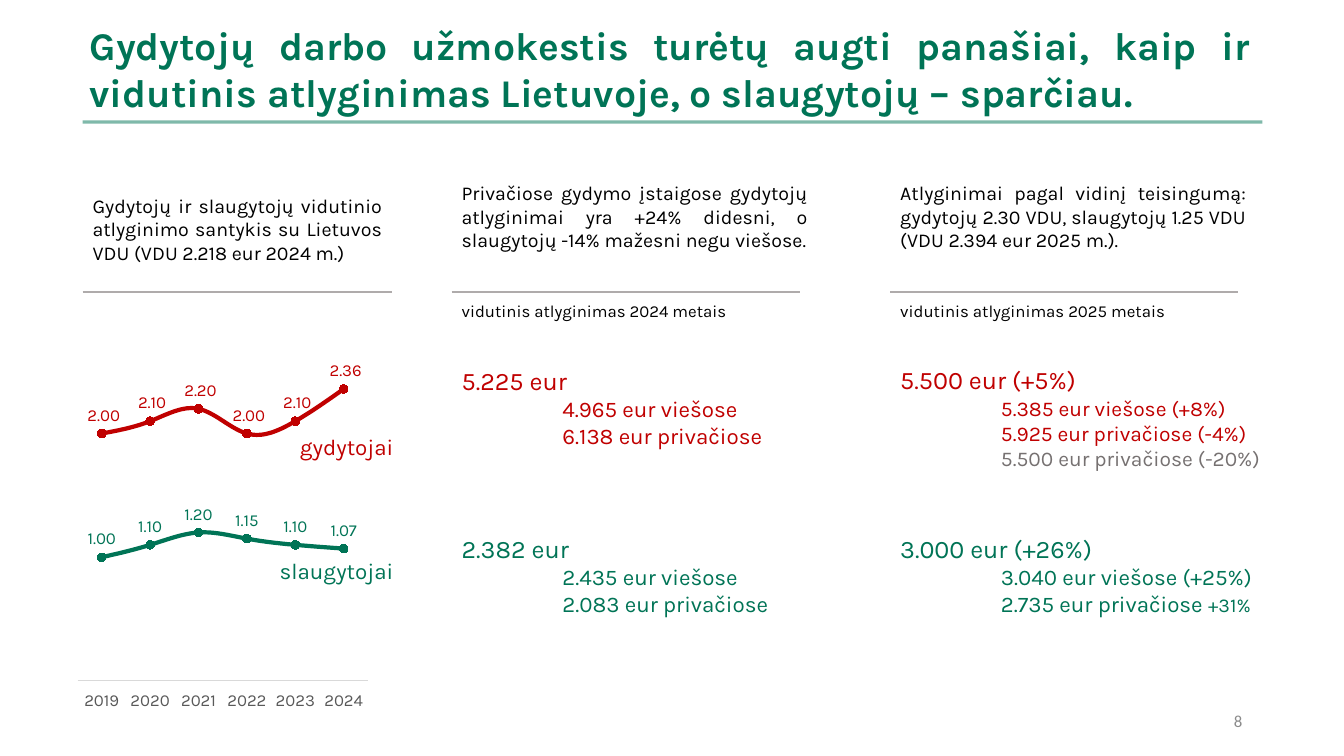
from lxml import etree
from pptx import Presentation
from pptx.chart.data import CategoryChartData
from pptx.dml.color import RGBColor
from pptx.enum.chart import (XL_CHART_TYPE, XL_LABEL_POSITION, XL_MARKER_STYLE,
                             XL_TICK_LABEL_POSITION, XL_TICK_MARK)
from pptx.enum.shapes import MSO_CONNECTOR
from pptx.enum.text import MSO_ANCHOR, MSO_AUTO_SIZE, PP_ALIGN
from pptx.oxml.ns import qn
from pptx.util import Inches, Pt

LEFT, RIGHT, JUSTIFY = PP_ALIGN.LEFT, PP_ALIGN.RIGHT, PP_ALIGN.JUSTIFY
FONT = "Karla"
COLORS = {"doctors": "C00000", "nurses": "007456", "text": "000000", "old": "767171",
          "rule": "AFABAB", "axis": "D9D9D9", "years": "595959", "page": "8B8B8B"}

# Content
TITLE = ("Gydytojų darbo užmokestis turėtų augti panašiai, kaip ir "
         "vidutinis atlyginimas Lietuvoje, o slaugytojų – sparčiau.")
PAGE = "8"
YEARS = ["2019", "2020", "2021", "2022", "2023", "2024"]
SPACED = r"_-* #\ ##0.00_-;\-* #\ ##0.00_-;_-* \-??"
# group, name, ratios, label format, name left, top
RATIOS = [
    ("doctors", "gydytojai", (2, 2.1, 2.2, 2, 2.1, 2.36), SPACED, 2.58, 4.25),
    ("nurses", "slaugytojai", (1, 1.1, 1.2, 1.15, 1.1, 1.07), "#,##0.00", 2.31, 5.48),
]
# Each pay line is a list of (text, size, colour) pieces
COLUMNS = [
    {"intro": "Gydytojų ir slaugytojų vidutinio atlyginimo santykis su Lietuvos "
              "VDU (VDU 2.218 eur 2024 m.)"},
    {"intro": "Privačiose gydymo įstaigose gydytojų atlyginimai yra +24% didesni, "
              "o slaugytojų -14% mažesni negu viešose.",
     "caption": "vidutinis atlyginimas 2024 metais",
     "pay": [
         [[("5.225 eur", 18, "doctors")],
          [("\t4.965 eur viešose", 16, "doctors")],
          [("\t6.138 eur privačiose", 16, "doctors")]],
         [[("2.382 eur", 18, "nurses")],
          [("\t2.435 eur viešose", 16, "nurses")],
          [("\t2.083 eur privačiose", 16, "nurses")]]]},
    {"intro": "Atlyginimai pagal vidinį teisingumą: gydytojų 2.30 VDU, slaugytojų "
              "1.25 VDU (VDU 2.394 eur 2025 m.).",
     "caption": "vidutinis atlyginimas 2025 metais",
     "pay": [
         [[("5.500 eur (+5%)", 18, "doctors")],
          [("\t5.385 eur viešose (+8%)", 15, "doctors")],
          [("\t5.925 eur privačiose (-4%)", 15, "doctors")],
          [("\t5.500 eur privačiose (-20%)", 15, "old")]],
         [[("3.000 eur (+26%)", 18, "nurses")],
          [("\t3.040 eur viešose (+25%)", 16, "nurses")],
          [("\t2.735 eur privačiose ", 16, "nurses"), ("+31%", 14, "nurses")]]]},
]

# Grid, in inches: column left, rule width, intro width, intro top, pay width
GRID = [(0.82, 3.07, 3.07, 1.87, 0), (4.48, 3.45, 3.63, 1.75, 3.93),
        (8.83, 3.45, 3.63, 1.75, 4.33)]
RULE_Y, CAPTION_Y, PAY_ROWS = 2.9, 2.93, (3.57, 5.24)
TITLE_RULE = (0.82, 1.21, 11.7)
PLOT_SHARES = {"x": 0.02, "y": 0.03, "w": 0.96, "h": 0.88}

prs = Presentation()
prs.slide_width, prs.slide_height = Inches(13.33), Inches(7.5)
slide = prs.slides.add_slide(prs.slide_layouts[6])


def rgb(name):
    return RGBColor.from_string(COLORS[name])


def style(font, size, color, face=FONT, bold=False):
    font.size, font.name, font.bold = Pt(size), face, bold
    font.color.rgb = rgb(color)


def add_text(x, y, w, h, lines, align=LEFT, face=FONT, bold=False, anchor=MSO_ANCHOR.TOP):
    frame = slide.shapes.add_textbox(*map(Inches, (x, y, w, h))).text_frame
    frame.word_wrap = True
    frame.auto_size = MSO_AUTO_SIZE.SHAPE_TO_FIT_TEXT
    frame.vertical_anchor = anchor
    for i, pieces in enumerate(lines):
        paragraph = frame.add_paragraph() if i else frame.paragraphs[0]
        paragraph.alignment = align
        if pieces[0][0].startswith("\t"):
            stops = etree.SubElement(paragraph._p.get_or_add_pPr(), qn("a:tabLst"))
            etree.SubElement(stops, qn("a:tab"), pos=str(Inches(1)), algn="l")
        for text, size, color in pieces:
            run = paragraph.add_run()
            run.text = text
            style(run.font, size, color, face, bold)


def add_rule(x, y, w, color, width, opacity=100):
    rule = slide.shapes.add_connector(MSO_CONNECTOR.STRAIGHT, *map(Inches, (x, y, x + w, y)))
    rule.line.color.rgb, rule.line.width = rgb(color), Pt(width)
    if opacity < 100:
        fill = rule.line._ln.find(".//" + qn("a:srgbClr"))
        etree.SubElement(fill, qn("a:alpha"), val=str(opacity * 1000))
    etree.SubElement(rule._element.spPr, qn("a:effectLst"))


# Page number and title
add_text(9.42, 6.95, 3, 0.4, [[(PAGE, 12, "page")]], RIGHT, "Calibri", anchor=MSO_ANCHOR.MIDDLE)
add_text(0.79, 0.16, 11.7, 1.5, [[(TITLE, 28, "nurses")]], JUSTIFY, bold=True)
add_rule(*TITLE_RULE, "nurses", 2.25, opacity=50)

# Pay ratio chart
ratio_data = CategoryChartData()
ratio_data.categories = YEARS
for _, name, values, *_ in RATIOS:
    ratio_data.add_series(name, values)
chart = slide.shapes.add_chart(XL_CHART_TYPE.LINE_MARKERS,
                               *map(Inches, (0.71, 3.58, 3, 3.49)), ratio_data).chart
chart.has_legend = chart.has_title = False
style(chart.font, 12, "text")
plot = chart.plots[0]
plot.vary_by_categories = False

value_axis, year_axis = chart.value_axis, chart.category_axis
value_axis.minimum_scale, value_axis.maximum_scale = 0, 2.5
value_axis.has_major_gridlines = False
value_axis.visible = False
year_axis.major_tick_mark = year_axis.minor_tick_mark = XL_TICK_MARK.NONE
year_axis.tick_label_position = XL_TICK_LABEL_POSITION.LOW
year_axis.format.line.color.rgb = rgb("axis")
year_axis.format.line.width = Pt(0.75)
style(year_axis.tick_labels.font, 12, "years")

plot_area = chart._chartSpace.chart.plotArea
for old_layout in plot_area.findall(qn("c:layout")):
    plot_area.remove(old_layout)
layout = etree.Element(qn("c:layout"))
plot_area.insert(0, layout)
manual = etree.SubElement(layout, qn("c:manualLayout"))
etree.SubElement(manual, qn("c:layoutTarget"), val="inner")
for side in "xy":
    etree.SubElement(manual, qn(f"c:{side}Mode"), val="edge")
for side, share in PLOT_SHARES.items():
    etree.SubElement(manual, qn(f"c:{side}"), val=str(share))

for series, (group, name, _, number_format, x, y) in zip(plot.series, RATIOS):
    series.smooth = True
    series.format.line.color.rgb, series.format.line.width = rgb(group), Pt(3)
    marker = series.marker
    marker.style, marker.size = XL_MARKER_STYLE.CIRCLE, 6
    marker.format.fill.solid()
    marker.format.fill.fore_color.rgb = marker.format.line.color.rgb = rgb(group)
    labels = series.data_labels
    labels.show_value, labels.position = True, XL_LABEL_POSITION.ABOVE
    labels.number_format, labels.number_format_is_linked = number_format, False
    style(labels.font, 12, group)
    add_text(x, y, 4 - x, 0.37, [[(name, 16, group)]], RIGHT)

# Three columns
for column, (x, rule_w, intro_w, intro_y, pay_w) in zip(COLUMNS, GRID):
    add_text(x, intro_y, intro_w, 1.03, [[(column["intro"], 14, "text")]], JUSTIFY)
    add_rule(x, RULE_Y, rule_w, "rule", 1.5)
    if "caption" in column:
        add_text(x, CAPTION_Y, rule_w, 0.3, [[(column["caption"], 12, "text")]])
    for y, lines in zip(PAY_ROWS, column.get("pay", [])):
        add_text(x, y, pay_w, 0.26 + 0.235 * len(lines), lines)

prs.save("out.pptx")
